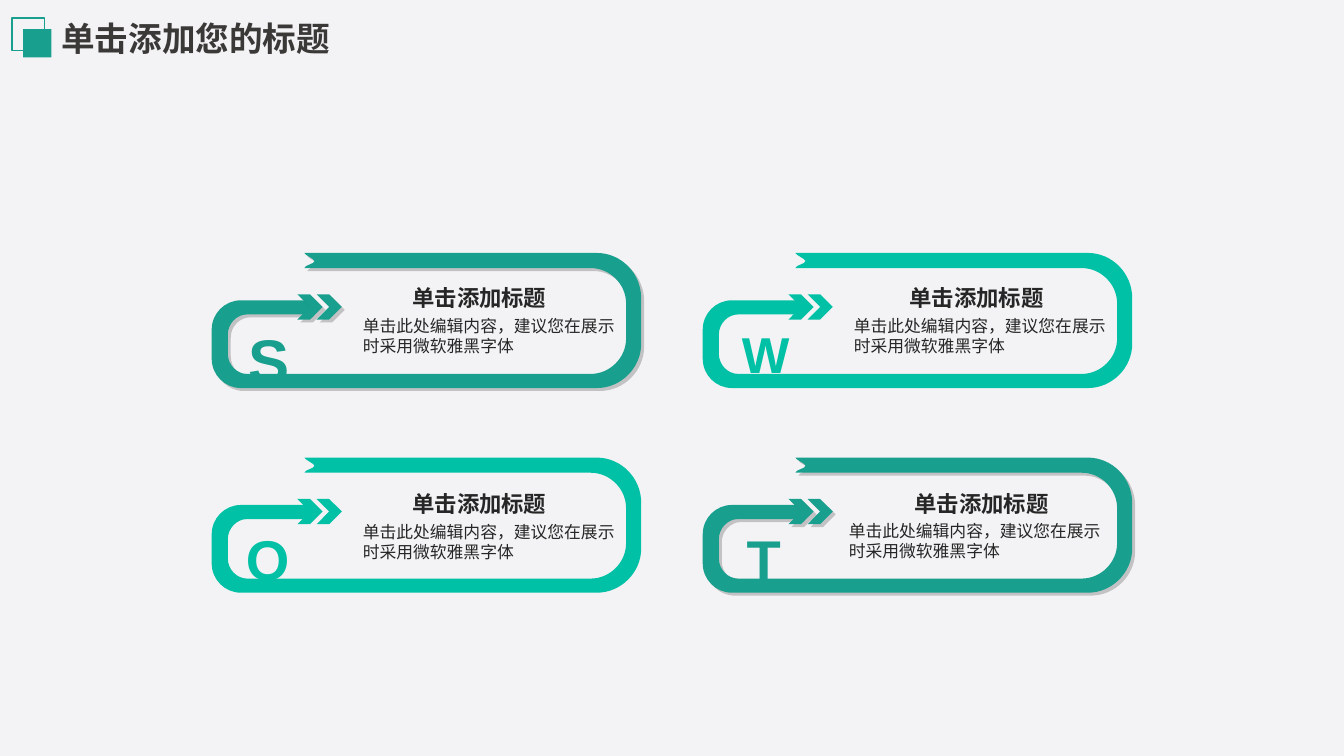
from pptx import Presentation
from pptx.dml.color import RGBColor
from pptx.enum.shapes import MSO_SHAPE
from pptx.enum.text import MSO_AUTO_SIZE, PP_ALIGN
from pptx.oxml import parse_xml
from pptx.oxml.ns import nsdecls, qn
from pptx.util import Pt

PX = 9144  # EMU; 100 px to the inch
SLIDE_W, SLIDE_H = 1333, 750
RECT, CHEVRON = MSO_SHAPE.RECTANGLE, MSO_SHAPE.CHEVRON
LEFT, CENTER = PP_ALIGN.LEFT, PP_ALIGN.CENTER
FIT_SHAPE = MSO_AUTO_SIZE.SHAPE_TO_FIT_TEXT

PAPER = RGBColor(0xF3, 0xF3, 0xF5)
TEAL = RGBColor(0x19, 0x9F, 0x8E)
MINT = RGBColor(0x00, 0xC1, 0xA5)
INK = RGBColor(0x26, 0x26, 0x26)
TITLE_INK = RGBColor(0x3B, 0x38, 0x38)

HEADING = "单击添加标题"
BODY = "单击此处编辑内容，建议您在展示时采用微软雅黑字体"

# letter, size, letter box, heading corner, body corner; all from the card's corner
CARDS = [
    ("S", 44, (20, 41, 73, 97), (188, 26), (140, 57), TEAL),
    ("W", 36, (26, 47, 73, 81), (194, 26), (140, 57), MINT),
    ("O", 40, (19, 41, 73, 89), (188, 27), (140, 59), MINT),
    ("T", 40, (24, 41, 73, 89), (199, 27), (135, 58), TEAL),
]
CARD_X, CARD_Y, STEP_X, STEP_Y = 210, 251, 487, 203

# 2 numbers: line to; 4: rounded corner, end; 6: two curve handles, end
RIBBON = [
    (92, 0), (382, 0), (426, 0, 426, 45), (426, 90), (426, 134, 382, 134),
    (98, 134), (92, 134), (29, 134), (0, 134, 0, 105), (0, 76), (0, 47, 29, 47),
    (98, 47), (98, 61), (35, 61), (16, 61, 16, 81),
    (16, 100), (16, 120, 35, 120), (98, 120), (376, 120), (411, 120, 411, 85),
    (411, 50), (411, 15, 376, 15), (92, 15),
    (92, 12, 102, 11, 102, 8), (102, 6, 92, 2, 92, 0),
]
ROUND = 0.55


def curve_points(start, step):
    """Return the two handles and the end of a curved step."""
    end = step[-2:]
    if len(step) == 6:
        return step[:2], step[2:4], end
    corner = step[:2]
    handles = [tuple(round(a + (c - a) * ROUND) for a, c in zip(anchor, corner))
               for anchor in (start, end)]
    return *handles, end


def build_outline(s, x, y, outline):
    """Lay the anchors out as lines, then bend the lines that are curves."""
    anchors = [step[-2:] for step in outline]
    placed = [(x + ax, y + ay) for ax, ay in anchors]
    builder = s.shapes.build_freeform(*placed[0], scale=PX)
    builder.add_line_segments(placed[1:], close=True)
    sp = builder.convert_to_shape()
    lines = list(sp.element.iter(qn("a:lnTo")))
    for line, start, step in zip(lines, anchors, outline[1:]):
        if len(step) > 2:
            points = "".join(f'<a:pt x="{px}" y="{py}"/>'
                             for px, py in curve_points(start, step))
            curve = parse_xml(f'<a:cubicBezTo {nsdecls("a")}>{points}</a:cubicBezTo>')
            line.getparent().replace(line, curve)
    return sp


def paint(sp, color, shadow=False):
    sp.fill.solid()
    sp.fill.fore_color.rgb = color
    sp.line.fill.background()
    sp.shadow.inherit = False
    if shadow:
        sp.element.spPr.find(qn("a:effectLst")).append(parse_xml(
            f'<a:outerShdw {nsdecls("a")} blurRad="0" dist="{Pt(3)}" dir="2700000" '
            'algn="tl" rotWithShape="0"><a:srgbClr val="000000">'
            '<a:alpha val="20000"/></a:srgbClr></a:outerShdw>'))


def add_preset(s, kind, x, y, w, h):
    return s.shapes.add_shape(kind, x * PX, y * PX, w * PX, h * PX)


def add_text(s, box, text, size, color, bold=False, align=LEFT, wrap=True, spacing=None):
    tf = s.shapes.add_textbox(*(v * PX for v in box)).text_frame
    tf.word_wrap = wrap
    tf.auto_size = FIT_SHAPE
    p = tf.paragraphs[0]
    p.alignment = align
    p.line_spacing = spacing
    r = p.add_run()
    r.text = text
    for name, value in {"name": "Arial", "size": Pt(size), "bold": bold}.items():
        setattr(r.font, name, value)
    r.font.color.rgb = color


def add_title(s, x, y):
    paint(add_preset(s, RECT, x + 11, y + 11, 28, 28), TEAL)
    frame = add_preset(s, RECT, x, y, 32, 32)
    frame.fill.background()
    frame.line.color.rgb = TEAL
    frame.line.width = Pt(1)
    frame.shadow.inherit = False
    add_text(s, (x + 39, y - 5, 325, 50), "单击添加您的标题", 24, TITLE_INK, bold=True)


def add_ribbon(s, x, y, color, shadow):
    paint(build_outline(s, x, y, RIBBON), color, shadow)
    for dx in (85, 104):
        paint(add_preset(s, CHEVRON, x + dx, y + 41, 25, 25), color, shadow)


def add_card(s, x, y, letter, size, letter_box, heading_at, body_at, color):
    add_ribbon(s, x, y, color, shadow=color == TEAL)
    lx, ly, lw, lh = letter_box
    add_text(s, (x + lx, y + ly, lw, lh), letter, size, color,
             bold=True, align=CENTER, spacing=1.3)
    add_text(s, (x + heading_at[0], y + heading_at[1], 155, 37), HEADING, 16, INK,
             bold=True, align=CENTER, wrap=False)
    add_text(s, (x + body_at[0], y + body_at[1], 274, 50), BODY, 12, INK)


def main():
    prs = Presentation()
    prs.slide_width, prs.slide_height = SLIDE_W * PX, SLIDE_H * PX
    s = prs.slides.add_slide(prs.slide_layouts[6])
    paint(add_preset(s, RECT, 0, 0, SLIDE_W, SLIDE_H), PAPER)
    add_title(s, 12, 18)
    for i, card in enumerate(CARDS):
        row, col = divmod(i, 2)
        add_card(s, CARD_X + col * STEP_X, CARD_Y + row * STEP_Y, *card)
    prs.save("out.pptx")


if __name__ == "__main__":
    main()
